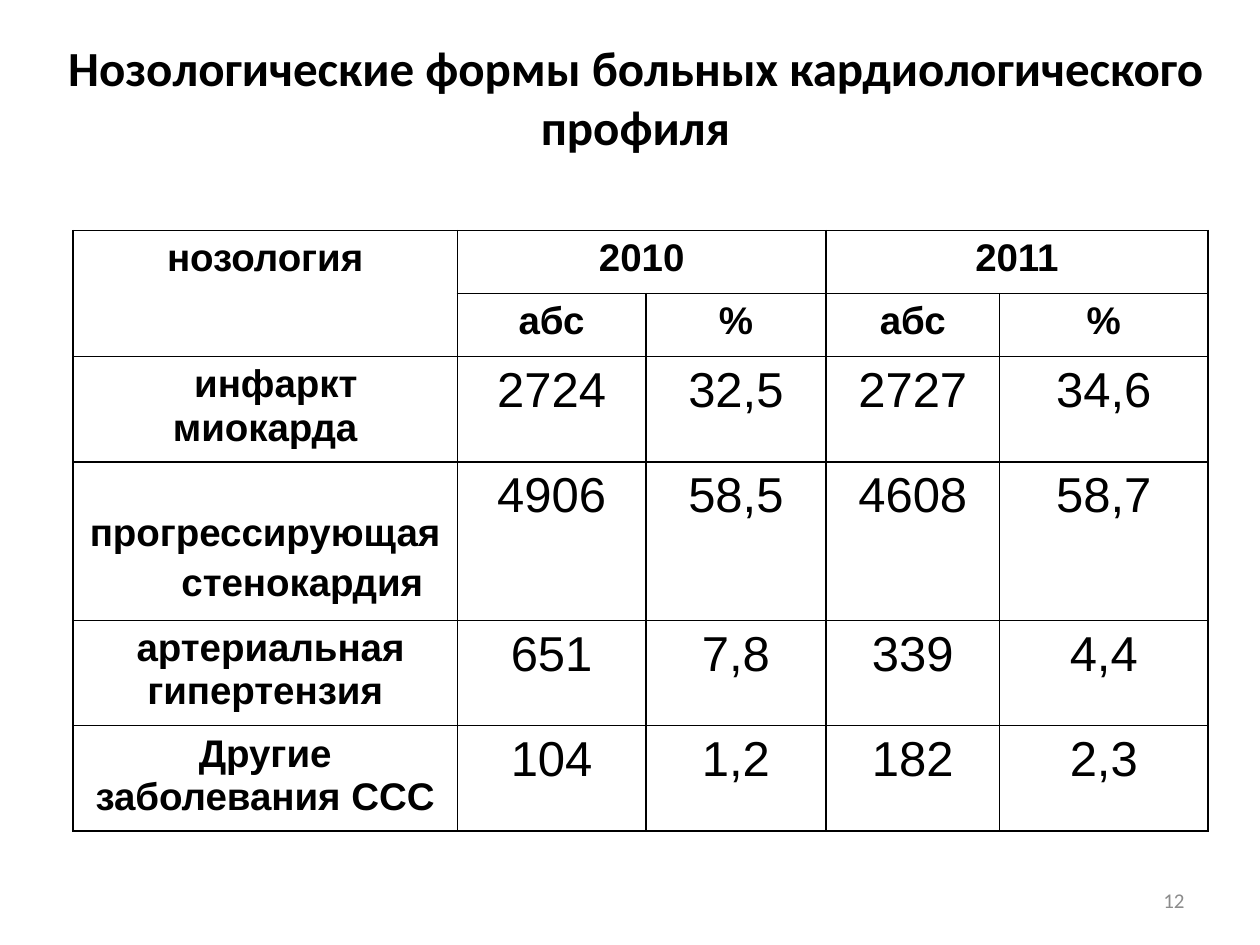
import dataclasses

import pptx
import pptx.dml.color
import pptx.enum.text
import pptx.oxml
import pptx.oxml.ns
import pptx.util

Cm = pptx.util.Cm
Pt = pptx.util.Pt
ALIGN = pptx.enum.text.PP_ALIGN
ANCHOR = pptx.enum.text.MSO_ANCHOR

COLORS = {"ink": "000000", "page": "8C8C8C"}
COLS = [7.75, 3.8, 3.63, 3.5, 4.2]
ROWS = [1.27, 1.27, 2.12, 3.2, 2.12, 2.12]


@dataclasses.dataclass
class Style:
    size: int
    font: str = "Arial"
    bold: bool = False
    color: str = "ink"
    align: ALIGN = ALIGN.CENTER


@dataclasses.dataclass
class Line:
    text: str
    indent: float = 0


@dataclasses.dataclass
class Entry:
    lines: list[Line]
    values: list[str]
    drop: float = 0.13


HEAD = Style(22, bold=True)
VALUE = Style(28)
TITLE = Style(28, "Calibri", True)
PAGE = Style(12, "Calibri", color="page", align=ALIGN.RIGHT)

ENTRIES = [
    Entry([Line("инфаркт миокарда", 0.43)], ["2724", "32,5", "2727", "34,6"]),
    Entry([Line("прогрессирующая"), Line("стенокардия", 1.5)],
          ["4906", "58,5", "4608", "58,7"], drop=1.0),
    Entry([Line("артериальная гипертензия", 0.22)],
          ["651", "7,8", "339", "4,4"]),
    Entry([Line("Другие заболевания ССС")], ["104", "1,2", "182", "2,3"]),
]


def write(frame, lines: list[Line], style: Style) -> None:
    for i, line in enumerate(lines):
        para = frame.add_paragraph() if i else frame.paragraphs[0]
        para.alignment = style.align
        if i:
            para.space_before = Pt(4)
        if line.indent:
            props = para._p.get_or_add_pPr()
            props.set("marL", "0")
            props.set("indent", str(int(Cm(line.indent))))
        run = para.add_run()
        run.text = line.text
        font = run.font
        font.name, font.size, font.bold = style.font, Pt(style.size), style.bold
        font.color.rgb = pptx.dml.color.RGBColor.from_string(COLORS[style.color])


def add_text(slide, box: tuple, text: str, style: Style, anchor: ANCHOR) -> None:
    frame = slide.shapes.add_textbox(*map(Cm, box)).text_frame
    frame.word_wrap = True
    frame.vertical_anchor = anchor
    write(frame, [Line(text)], style)


def outline(cell) -> None:
    """Clear the fill and rule all four sides of a cell."""
    props = cell._tc.get_or_add_tcPr()
    for side in ("lnL", "lnR", "lnT", "lnB"):
        props.append(pptx.oxml.parse_xml(
            f'<a:{side} {pptx.oxml.ns.nsdecls("a")} w="{int(Pt(1))}">'
            f'<a:solidFill><a:srgbClr val="{COLORS["ink"]}"/></a:solidFill>'
            f'</a:{side}>'))
    cell.fill.background()


def add_grid(slide):
    grid = slide.shapes.add_table(
        len(ROWS), len(COLS), Cm(1.47), Cm(4.65), Cm(sum(COLS)), Cm(sum(ROWS))
    ).table
    grid.first_row = grid.horz_banding = False
    for col, width in zip(grid.columns, COLS):
        col.width = Cm(width)
    for row, height in zip(grid.rows, ROWS):
        row.height = Cm(height)
    for cell in grid.iter_cells():
        outline(cell)
    return grid


def fill_head(grid) -> None:
    grid.cell(0, 0).merge(grid.cell(1, 0))
    write(grid.cell(0, 0).text_frame, [Line("нозология")], HEAD)
    for col, year in ((1, "2010"), (3, "2011")):
        grid.cell(0, col).merge(grid.cell(0, col + 1))
        write(grid.cell(0, col).text_frame, [Line(year)], HEAD)
        for step, unit in enumerate(("абс", "%")):
            write(grid.cell(1, col + step).text_frame, [Line(unit)], HEAD)


def fill_body(grid) -> None:
    for row, entry in enumerate(ENTRIES, 2):
        name = grid.cell(row, 0)
        name.margin_top = Cm(entry.drop)
        write(name.text_frame, entry.lines, HEAD)
        for col, value in enumerate(entry.values, 1):
            write(grid.cell(row, col).text_frame, [Line(value)], VALUE)


def main() -> None:
    deck = pptx.Presentation()
    deck.slide_width, deck.slide_height = Cm(25.4), Cm(19.05)
    slide = deck.slides.add_slide(deck.slide_layouts[6])
    add_text(slide, (18.2, 17.65, 5.93, 1.01), "12", PAGE, ANCHOR.MIDDLE)
    grid = add_grid(slide)
    fill_head(grid)
    fill_body(grid)
    add_text(slide, (1.06, 0.64, 23.5, 2.64),
             "Нозологические формы больных кардиологического профиля",
             TITLE, ANCHOR.TOP)
    deck.save("out.pptx")


if __name__ == "__main__":
    main()
